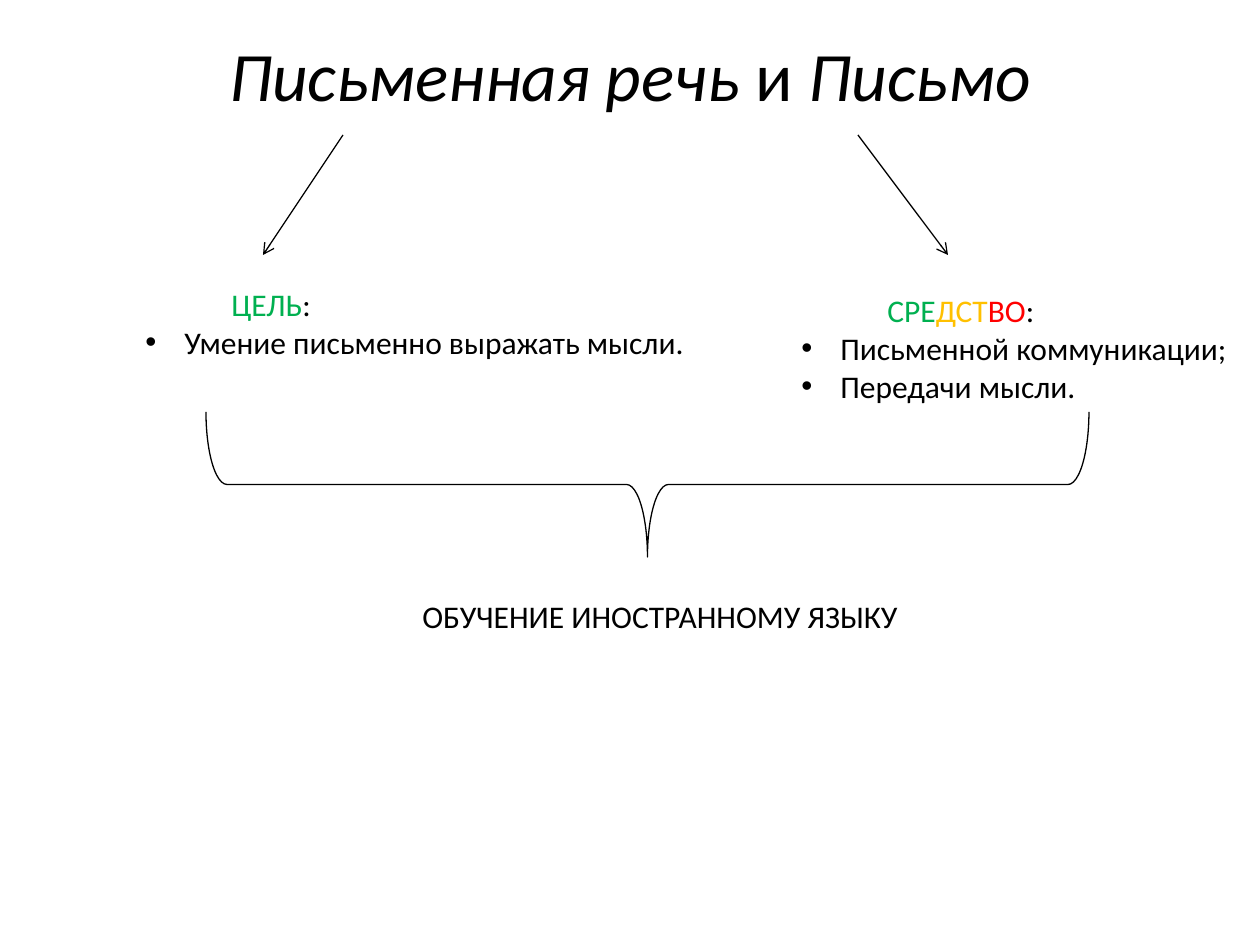
import pptx
import pptx.dml.color
import pptx.enum.shapes
import pptx.enum.text
import pptx.oxml.ns
import pptx.util
from lxml import etree

EMU_PER_PX = 914400 // 126
FONT = "Calibri"
BLACK, GREEN, AMBER, RED = "000000", "00B050", "FFC000", "FF0000"
BULLET_INDENT, HEADING_INDENT, CONCLUSION_INDENT = 39, 86, 28

# Content: boxes are left, top, width, height in px; runs are text, colour, italic
TITLE_BOX = (63, 32, 1134, 158)
TITLE_RUNS = [
    ("Письменная речь ", BLACK, True),
    ("и ", BLACK, False),
    ("Письмо", BLACK, True),
]
COLUMNS = [
    {
        "box": (133, 279, 571, 89),
        "heading": [("ЦЕЛЬ", GREEN, False), (":", BLACK, False)],
        "bullets": ["Умение письменно выражать мысли."],
        "arrow": (343, 135, 263, 255),
    },
    {
        "box": (789, 285, 456, 127),
        "heading": [("СРЕ", GREEN, False), ("ДСТ", AMBER, False),
                    ("ВО", RED, False), (":", BLACK, False)],
        "bullets": ["Письменной коммуникации;", "Передачи мысли."],
        "arrow": (858, 135, 948, 255),
    },
]
BRACE_BOX = (575, 43, 145, 883)
CONCLUSION_BOX = (382, 591, 534, 50)
CONCLUSION = "ОБУЧЕНИЕ ИНОСТРАННОМУ ЯЗЫКУ"


def px(length):
    return pptx.util.Emu(length * EMU_PER_PX)


def color(value):
    return pptx.dml.color.RGBColor.from_string(value)


def add_child(parent, tag, **attributes):
    return etree.SubElement(parent, pptx.oxml.ns.qn(tag), attributes)


def add_text_box(slide, box):
    frame = slide.shapes.add_textbox(*map(px, box)).text_frame
    frame.word_wrap = True
    return frame


def fill_paragraph(paragraph, runs, size=18, indent=0, bullet=False):
    properties = paragraph._p.get_or_add_pPr()
    properties.set("marL", str(px(indent)))
    if bullet:
        properties.set("indent", str(px(-indent)))
        add_child(properties, "a:buFont", typeface="Arial")
        add_child(properties, "a:buChar", char="•")
    for text, run_color, italic in runs:
        run = paragraph.add_run()
        run.text = text
        run.font.name = FONT
        run.font.size = pptx.util.Pt(size)
        run.font.italic = italic
        run.font.color.rgb = color(run_color)


def style_line(shape):
    shape.line.color.rgb = color(BLACK)
    shape.line.width = pptx.util.Pt(0.75)


def add_arrow(slide, points):
    arrow = slide.shapes.add_connector(
        pptx.enum.shapes.MSO_CONNECTOR.STRAIGHT, *map(px, points))
    style_line(arrow)
    add_child(arrow.line._get_or_add_ln(), "a:tailEnd", type="arrow")
    add_child(arrow._element.spPr, "a:effectLst")


def add_column(slide, column):
    add_arrow(slide, column["arrow"])
    frame = add_text_box(slide, column["box"])
    fill_paragraph(frame.paragraphs[0], column["heading"], indent=HEADING_INDENT)
    for text in column["bullets"]:
        fill_paragraph(frame.add_paragraph(), [(text, BLACK, False)],
                       indent=BULLET_INDENT, bullet=True)


def add_brace(slide):
    brace = slide.shapes.add_shape(
        pptx.enum.shapes.MSO_SHAPE.RIGHT_BRACE, *map(px, BRACE_BOX))
    brace.rotation = 90
    brace.adjustments[0] = 0.145
    brace.adjustments[1] = 0.5
    brace.shadow.inherit = False
    brace.fill.background()
    style_line(brace)


def main():
    presentation = pptx.Presentation()
    presentation.slide_width = pptx.util.Inches(10)
    presentation.slide_height = pptx.util.Inches(7.5)
    slide = presentation.slides.add_slide(presentation.slide_layouts[6])

    # Title
    title = add_text_box(slide, TITLE_BOX)
    title.margin_top = 0
    title.paragraphs[0].alignment = pptx.enum.text.PP_ALIGN.CENTER
    fill_paragraph(title.paragraphs[0], TITLE_RUNS, size=39.6)

    # Goal and means, each under its arrow
    for column in COLUMNS:
        add_column(slide, column)

    # Brace and the conclusion below it
    add_brace(slide)
    conclusion = add_text_box(slide, CONCLUSION_BOX)
    fill_paragraph(conclusion.paragraphs[0], [(CONCLUSION, BLACK, False)],
                   indent=CONCLUSION_INDENT)

    presentation.save("out.pptx")


if __name__ == "__main__":
    main()
